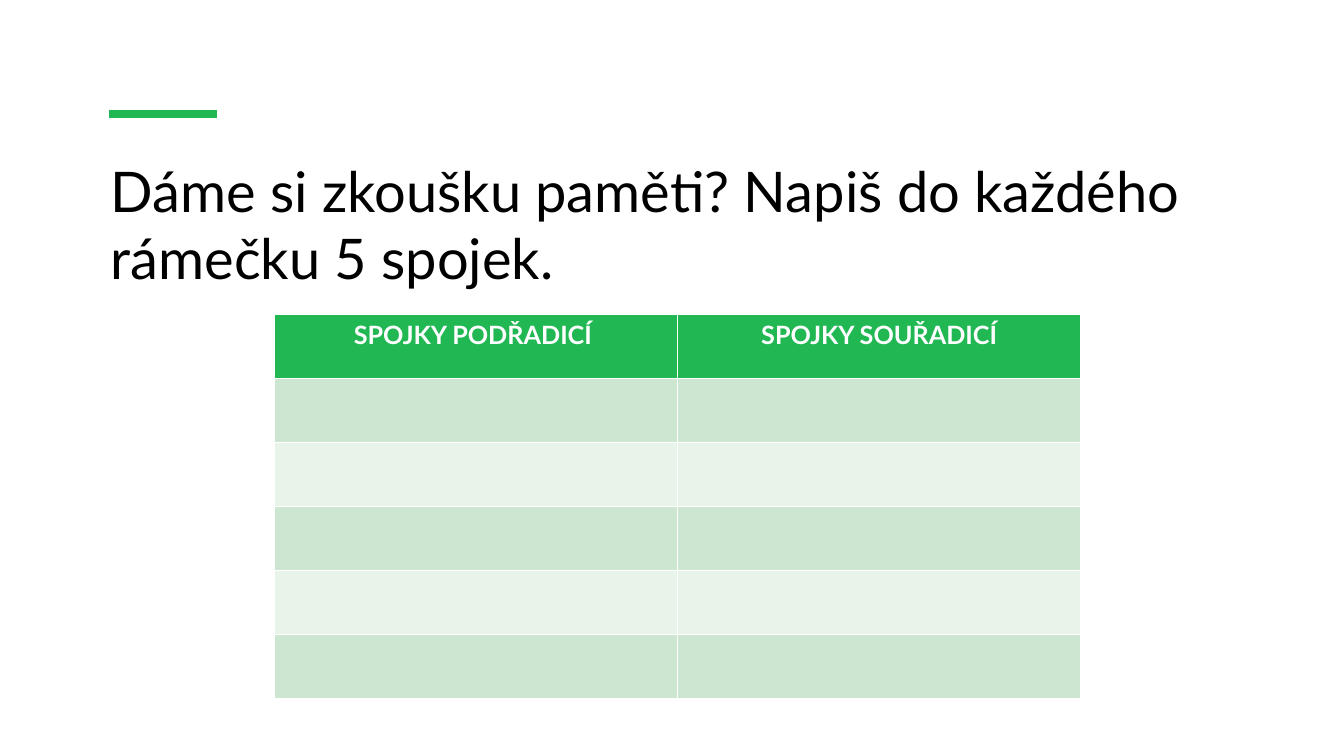
"""Build a Czech grammar slide with a two-column table for conjunctions."""
from pptx import Presentation, util as u
from pptx.dml.color import RGBColor
from pptx.enum import shapes, text
from pptx.oxml.ns import qn
from lxml import etree

TITLE = "Dáme si zkoušku paměti? Napiš do každého rámečku 5 spojek."
HEADERS = ["SPOJKY PODŘADICÍ ", "SPOJKY SOUŘADICÍ"]
ANSWER_ROWS = 5
FONT = "Lato"
BLACK = RGBColor(0x00, 0x00, 0x00)
WHITE = RGBColor(0xFF, 0xFF, 0xFF)
GREEN = RGBColor(0x21, 0xB8, 0x54)
BANDS = [RGBColor(0xCD, 0xE6, 0xD1), RGBColor(0xE8, 0xF3, 0xE9)]
COL_W, ROW_H = u.Inches(4), u.Inches(0.635)


def write(tf, content, size, color, align, bold=False):
    tf.text = content
    p = tf.paragraphs[0]
    p.alignment = align
    font = p.runs[0].font
    font.name, font.size, font.bold = FONT, u.Pt(size), bold
    font.color.rgb = color


def add_accent(s):
    y = u.Inches(1.13)
    line = s.shapes.add_connector(
        shapes.MSO_CONNECTOR.STRAIGHT, u.Inches(1.08), y, u.Inches(2.15), y)
    line.line.color.rgb = GREEN
    line.line.width = u.Pt(6)
    etree.SubElement(line._element.spPr, qn("a:effectLst"))


def add_title(s):
    title = s.shapes.title
    title.left, title.top = u.Inches(1), u.Inches(1.5)
    title.width, title.height = u.Inches(11.33), u.Inches(1.44)
    tf = title.text_frame
    tf.word_wrap = True
    tf.auto_size = text.MSO_AUTO_SIZE.NONE
    tf.vertical_anchor = text.MSO_ANCHOR.MIDDLE
    write(tf, TITLE, 40, BLACK, text.PP_ALIGN.LEFT)


def add_answer_table(s):
    rows, cols = ANSWER_ROWS + 1, len(HEADERS)
    table = s.shapes.add_table(rows, cols, u.Inches(2.72), u.Inches(3.12),
                               COL_W * cols, ROW_H * rows).table
    for i, row in enumerate(table.rows):
        row.height = ROW_H
        for cell in row.cells:
            cell.fill.solid()
            cell.fill.fore_color.rgb = BANDS[(i - 1) % 2] if i else GREEN
    for cell, header in zip(table.rows[0].cells, HEADERS):
        write(cell.text_frame, header, 18, WHITE, text.PP_ALIGN.CENTER, True)


def main():
    prs = Presentation()
    prs.slide_width, prs.slide_height = u.Inches(13.33), u.Inches(7.5)
    s = prs.slides.add_slide(prs.slide_layouts[5])
    add_accent(s)
    add_title(s)
    add_answer_table(s)
    prs.save("out.pptx")


if __name__ == "__main__":
    main()
